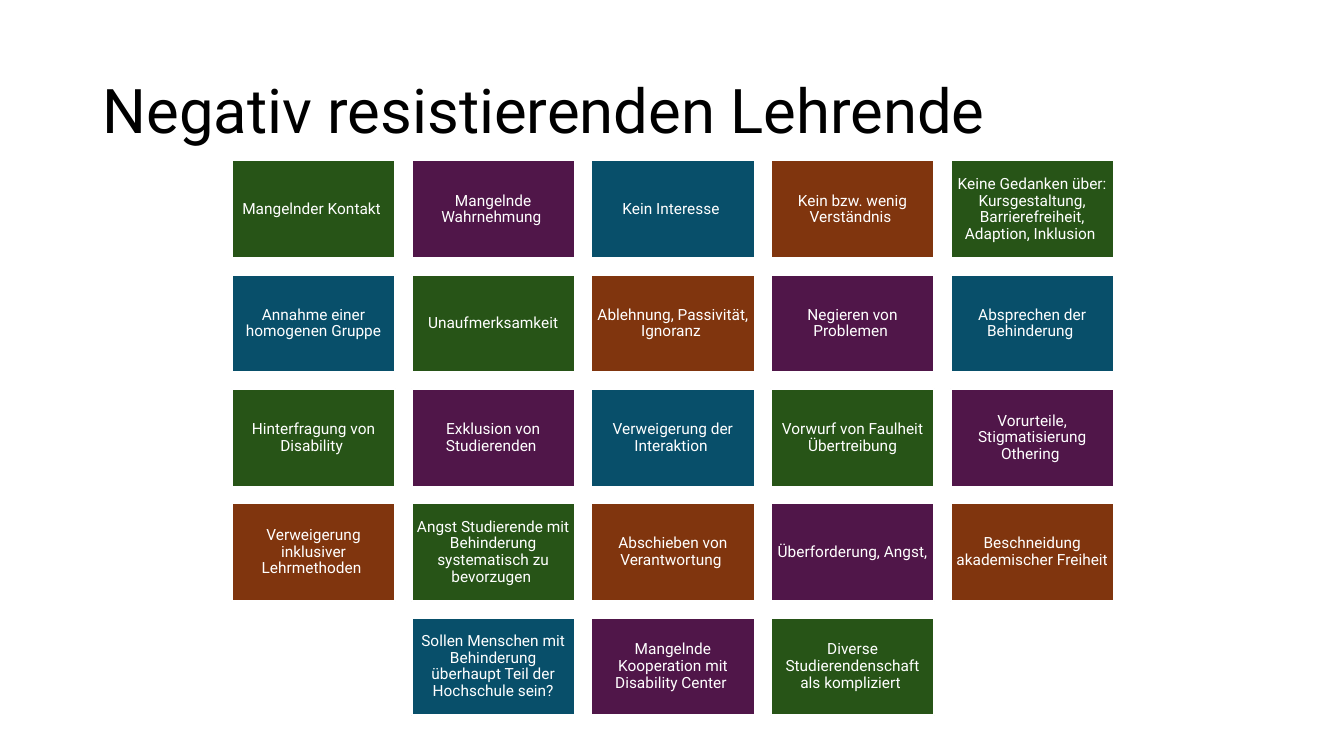
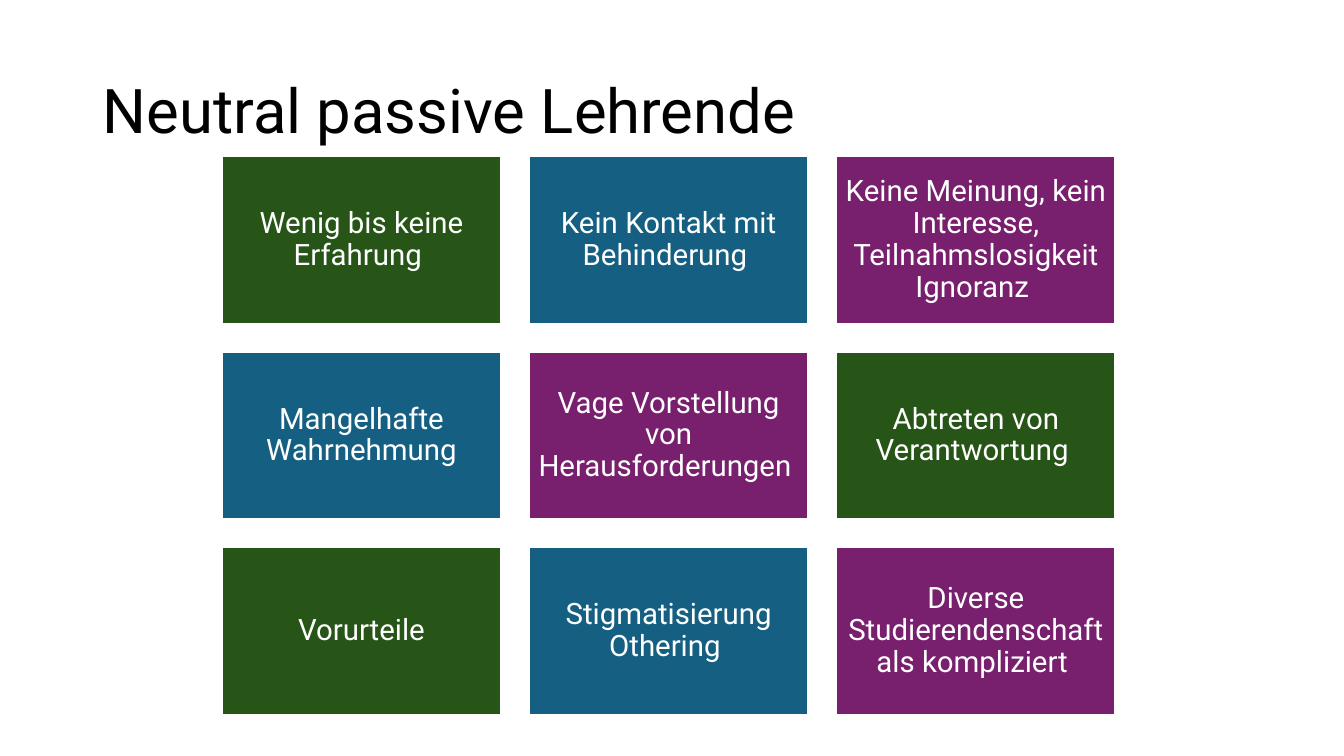
import pptx
import pptx.dml.color
import pptx.enum.shapes
import pptx.enum.text
import pptx.util

Inches, Pt = pptx.util.Inches, pptx.util.Pt
ALIGN = pptx.enum.text.PP_ALIGN
MIDDLE = pptx.enum.text.MSO_ANCHOR.MIDDLE
RECT = pptx.enum.shapes.MSO_SHAPE.RECTANGLE

GREEN = "275417"
PURPLE, PLUM = "501649", "78206E"
PETROL, BLUE = "084F6A", "156082"
BROWN = "80350E"


def rgb(value):
    return pptx.dml.color.RGBColor.from_string(value)


def assign(target, values):
    for name, value in values.items():
        setattr(target, name, value)


class Deck:
    """Shared style and the current slide."""

    FONT = "Roboto"
    WHITE, BLACK = "FFFFFF", "000000"
    TITLE_BOX = {"left": Inches(0.92), "top": Inches(0.4),
                 "width": Inches(11.5), "height": Inches(1.45)}
    GAP = 0.1     # share of the tile width
    ASPECT = 0.6  # tile height to width

    def __init__(self):
        self.prs = pptx.Presentation()
        assign(self.prs, {"slide_width": Inches(13.33),
                          "slide_height": Inches(7.5)})
        self.layout = self.prs.slide_layouts[5]
        assign(self.layout.placeholders[0], self.TITLE_BOX)
        self.s = None

    def label(self, sp, text, size, color, align, inset=None):
        tf = sp.text_frame
        assign(tf, {"word_wrap": True, "vertical_anchor": MIDDLE,
                    "auto_size": pptx.enum.text.MSO_AUTO_SIZE.NONE})
        if inset is not None:
            sides = ("left", "top", "right", "bottom")
            assign(tf, {f"margin_{side}": Inches(inset) for side in sides})
        p = tf.paragraphs[0]
        assign(p, {"alignment": align, "line_spacing": 0.9})
        r = p.add_run()
        r.text = text
        assign(r.font, {"name": self.FONT, "size": Pt(size)})
        r.font.color.rgb = rgb(color)

    def slide(self, title):
        self.s = self.prs.slides.add_slide(self.layout)
        self.label(self.s.shapes.title, title, 44, self.BLACK, ALIGN.LEFT)

    def tile(self, box, text, fill, size, inset):
        sp = self.s.shapes.add_shape(RECT, *map(Inches, box))
        sp.shadow.inherit = False
        sp.fill.solid()
        sp.fill.fore_color.rgb = rgb(fill)
        sp.line.color.rgb = rgb(self.WHITE)
        sp.line.width = Pt(1.5)
        self.label(sp, text, size, self.WHITE, ALIGN.CENTER, inset)

    def tiles(self, rows, left, top, width, size, inset):
        """Lay rows of (text, fill) on a grid; short rows are centred."""
        columns = max(map(len, rows))
        height, gap = width * self.ASPECT, width * self.GAP
        for i, row in enumerate(rows):
            first = (columns - len(row)) / 2
            for j, (text, fill) in enumerate(row):
                x = left + (first + j) * (width + gap)
                y = top + i * (height + gap)
                self.tile((x, y, width, height), text, fill, size, inset)


NEGATIVE = [
    [("Mangelnder Kontakt ", GREEN),
     ("Mangelnde Wahrnehmung ", PURPLE),
     ("Kein Interesse ", PETROL),
     ("Kein bzw. wenig Verständnis ", BROWN),
     ("Keine Gedanken über: Kursgestaltung, Barrierefreiheit, "
      "Adaption, Inklusion ", GREEN)],
    [("Annahme einer homogenen Gruppe", PETROL),
     ("Unaufmerksamkeit", GREEN),
     ("Ablehnung, Passivität, Ignoranz ", BROWN),
     ("Negieren von Problemen ", PURPLE),
     ("Absprechen der Behinderung ", PETROL)],
    [("Hinterfragung von Disability ", GREEN),
     ("Exklusion von Studierenden ", PURPLE),
     ("Verweigerung der Interaktion ", PETROL),
     ("Vorwurf von Faulheit Übertreibung", GREEN),
     ("Vorurteile, Stigmatisierung Othering ", PURPLE)],
    [("Verweigerung inklusiver Lehrmethoden ", BROWN),
     ("Angst Studierende mit Behinderung systematisch zu bevorzugen ", GREEN),
     ("Abschieben von Verantwortung ", BROWN),
     ("Überforderung, Angst, ", PURPLE),
     ("Beschneidung akademischer Freiheit ", BROWN)],
    [("Sollen Menschen mit Behinderung überhaupt Teil der "
      "Hochschule sein?", PETROL),
     ("Mangelnde Kooperation mit Disability Center ", PURPLE),
     ("Diverse Studierendenschaft als kompliziert ", GREEN)],
]

NEUTRAL = [
    [("Wenig bis keine Erfahrung ", GREEN),
     ("Kein Kontakt mit Behinderung ", BLUE),
     ("Keine Meinung, kein Interesse, Teilnahmslosigkeit Ignoranz ", PLUM)],
    [("Mangelhafte Wahrnehmung", BLUE),
     ("Vage Vorstellung von Herausforderungen ", PLUM),
     ("Abtreten von Verantwortung ", GREEN)],
    [("Vorurteile", GREEN),
     ("Stigmatisierung Othering ", BLUE),
     ("Diverse Studierendenschaft als kompliziert ", PLUM)],
]


def main():
    deck = Deck()

    # Resisting teachers: five columns
    deck.slide("Negativ resistierenden Lehrende")
    deck.tiles(NEGATIVE, left=2.3, top=1.59, width=1.62, size=11, inset=0.05)

    # Passive teachers: three columns
    deck.slide("Neutral passive Lehrende")
    deck.tiles(NEUTRAL, left=2.2, top=1.55, width=2.77, size=21, inset=0.09)

    deck.prs.save("out.pptx")


if __name__ == "__main__":
    main()
